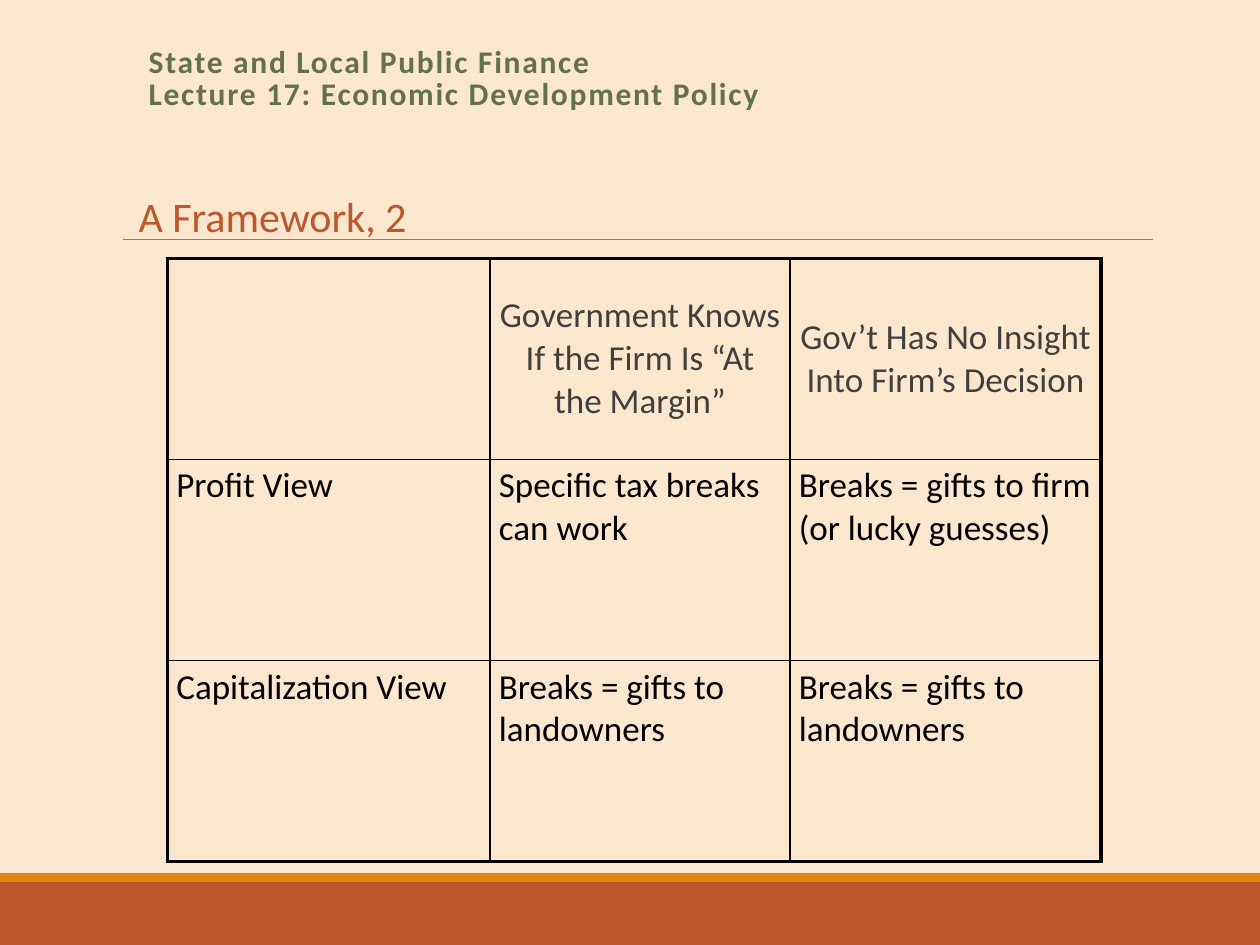
from lxml import etree
from pptx import Presentation
from pptx import util as u
from pptx.dml.color import RGBColor
from pptx.enum import shapes, text
from pptx.oxml import ns

CREAM = RGBColor(0xFB, 0xE6, 0xCE)
RUST = RGBColor(0xBD, 0x58, 0x2C)
ORANGE = RGBColor(0xE4, 0x83, 0x12)
GREEN = RGBColor(0x63, 0x70, 0x52)
GREY = RGBColor(0x80, 0x80, 0x80)
CHARCOAL = RGBColor(0x40, 0x40, 0x40)
BLACK = RGBColor(0, 0, 0)

FONT = "Calibri"
THIN, THICK = u.Pt(1), u.Pt(2.25)
COLUMN_WIDTHS = (2.56, 2.38, 2.47)
ROWS = (
    ("", "Government Knows If the Firm Is “At the Margin”",
     "Gov’t Has No Insight Into Firm’s Decision"),
    ("Profit View", "Specific tax breaks can work",
     "Breaks = gifts to firm (or lucky guesses)"),
    ("Capitalization View", "Breaks = gifts to landowners",
     "Breaks = gifts to landowners"),
)


def format_runs(paragraph, size, colour, bold=False, spacing=0):
    """Apply one character style to every run of a paragraph."""
    for run in paragraph.runs:
        run.font.name = FONT
        run.font.size = u.Pt(size)
        run.font.bold = bold
        run.font.color.rgb = colour
        if spacing:
            run.font._element.set("spc", str(spacing))


def add_band(slide, box, colour):
    """Add a plain filled rectangle."""
    shape = slide.shapes.add_shape(shapes.MSO_SHAPE.RECTANGLE, *map(u.Inches, box))
    shape.shadow.inherit = False
    shape.fill.solid()
    shape.fill.fore_color.rgb = colour
    shape.line.fill.background()


def add_rule(slide, left, right, top):
    """Add the thin horizontal line beneath the heading."""
    rule = slide.shapes.add_connector(
        shapes.MSO_CONNECTOR.STRAIGHT, *map(u.Inches, (left, top, right, top)))
    rule.line.color.rgb = GREY
    rule.line.width = u.Pt(0.5)
    etree.SubElement(rule._element.spPr, ns.qn("a:effectLst"))


def fill_placeholder(placeholder, box, content, line_spacing):
    """Place a left-aligned, top-anchored placeholder and return its paragraph."""
    (placeholder.left, placeholder.top,
     placeholder.width, placeholder.height) = map(u.Inches, box)
    frame = placeholder.text_frame
    frame.text = content
    frame.word_wrap = True
    frame.auto_size = text.MSO_AUTO_SIZE.NONE
    frame.vertical_anchor = text.MSO_ANCHOR.TOP
    paragraph = frame.paragraphs[0]
    paragraph.alignment = text.PP_ALIGN.LEFT
    paragraph.line_spacing = line_spacing
    paragraph.space_before = u.Pt(0)
    return paragraph


def add_title(slide, box):
    """Write the course and lecture title."""
    paragraph = fill_placeholder(
        slide.shapes.title, box,
        "State and Local Public Finance\vLecture 17: Economic Development Policy", 0.85)
    format_runs(paragraph, 18, GREEN, bold=True, spacing=100)


def add_heading(slide, box):
    """Write the section heading without a bullet."""
    paragraph = fill_placeholder(slide.placeholders[1], box, "A Framework, 2", 0.9)
    properties = paragraph._p.get_or_add_pPr()
    properties.set("marL", "0")
    properties.set("indent", "0")
    etree.SubElement(properties, ns.qn("a:buNone"))
    format_runs(paragraph, 24, RUST)


def set_borders(cell, widths):
    """Draw black cell borders in left, right, top, bottom order."""
    properties = cell._tc.get_or_add_tcPr()
    for position, (side, width) in enumerate(zip("LRTB", widths)):
        line = etree.Element(ns.qn(f"a:ln{side}"), w=str(width))
        fill = etree.SubElement(line, ns.qn("a:solidFill"))
        etree.SubElement(fill, ns.qn("a:srgbClr"), val=str(BLACK))
        properties.insert(position, line)


def format_cell(cell, row, column):
    """Style one cell according to its place in the table."""
    heading = row == 0
    cell.fill.background()
    cell.margin_left = cell.margin_right = u.Inches(0.07)
    cell.margin_top = cell.margin_bottom = u.Inches(0.04)
    cell.vertical_anchor = text.MSO_ANCHOR.MIDDLE if heading else text.MSO_ANCHOR.TOP
    paragraph = cell.text_frame.paragraphs[0]
    paragraph.alignment = text.PP_ALIGN.CENTER if heading else text.PP_ALIGN.LEFT
    format_runs(paragraph, 20, CHARCOAL if heading else BLACK)
    outer = (column == 0, column == len(COLUMN_WIDTHS) - 1, heading, row == len(ROWS) - 1)
    set_borders(cell, [THICK if edge else THIN for edge in outer])


def add_framework_table(slide, box):
    """Add the table comparing views by government knowledge."""
    table = slide.shapes.add_table(
        len(ROWS), len(COLUMN_WIDTHS), *map(u.Inches, box)).table
    table.first_row = table.horz_banding = False
    for column, width in zip(table.columns, COLUMN_WIDTHS):
        column.width = u.Inches(width)
    for row, contents in enumerate(ROWS):
        for column, content in enumerate(contents):
            cell = table.cell(row, column)
            cell.text = content
            format_cell(cell, row, column)


def build_slide(presentation):
    """Compose the framework slide."""
    slide = presentation.slides.add_slide(presentation.slide_layouts[1])
    slide.background.fill.solid()
    slide.background.fill.fore_color.rgb = CREAM
    add_band(slide, (0, 7, 10, 0.5), RUST)
    add_band(slide, (0, 6.93, 10, 0.07), ORANGE)
    add_rule(slide, 0.98, 9.15, 1.9)
    add_title(slide, (1.08, 0.33, 8.25, 0.65))
    add_heading(slide, (1, 1.51, 2.35, 0.46))
    add_framework_table(slide, (1.33, 2.05, sum(COLUMN_WIDTHS), 4.79))


def main():
    """Create and save the presentation."""
    presentation = Presentation()
    presentation.slide_width = u.Inches(10)
    presentation.slide_height = u.Inches(7.5)
    build_slide(presentation)
    presentation.save("out.pptx")


if __name__ == "__main__":
    main()
